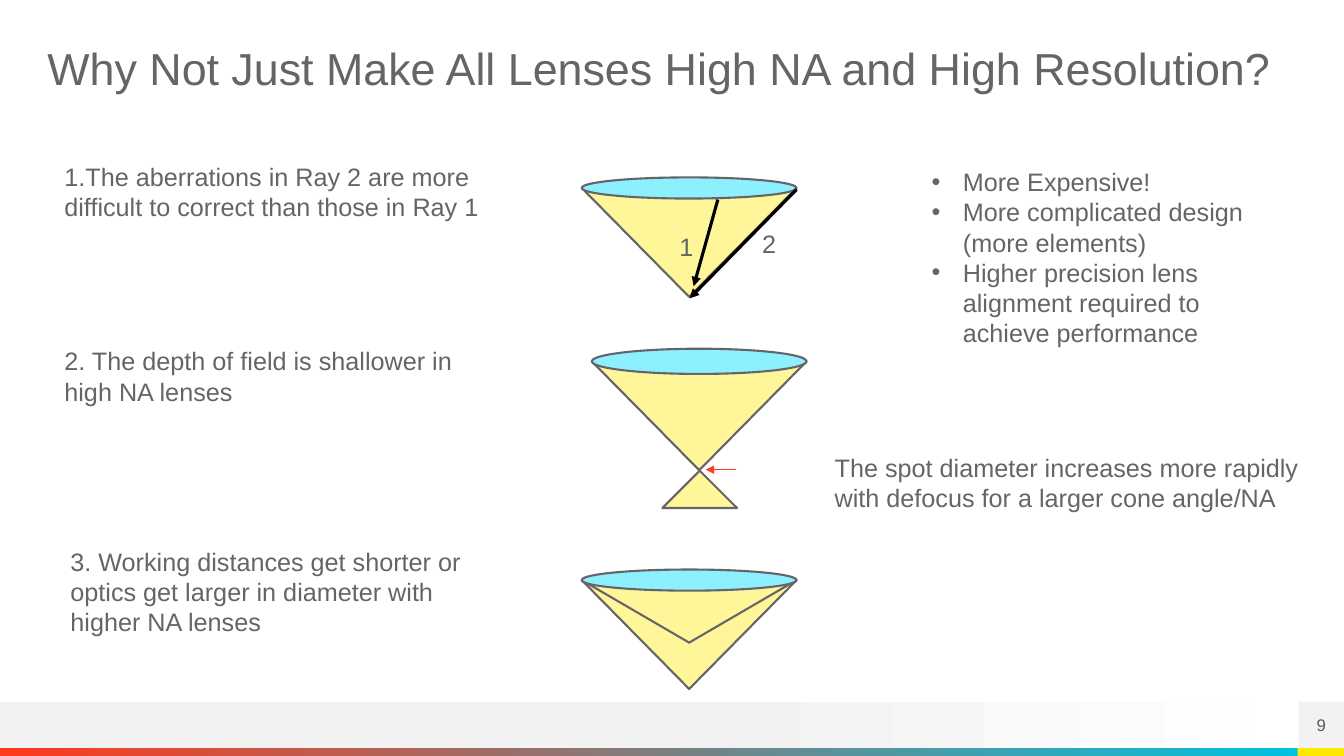
from dataclasses import dataclass

from lxml import etree
from pptx import Presentation
from pptx.dml.color import RGBColor
from pptx.enum.shapes import MSO_CONNECTOR, MSO_SHAPE
from pptx.enum.text import MSO_ANCHOR, MSO_AUTO_SIZE, PP_ALIGN
from pptx.oxml.ns import qn
from pptx.util import Inches, Pt

RECT = MSO_SHAPE.RECTANGLE
OVAL = MSO_SHAPE.OVAL
TRIANGLE = MSO_SHAPE.ISOSCELES_TRIANGLE
STRAIGHT = MSO_CONNECTOR.STRAIGHT
TOP, MIDDLE = MSO_ANCHOR.TOP, MSO_ANCHOR.MIDDLE
LEFT, CENTER = PP_ALIGN.LEFT, PP_ALIGN.CENTER
NO_FIT = MSO_AUTO_SIZE.NONE

COLORS = {
    "text": "656569", "page": "595959", "bar": "F2F2F2", "white": "FFFFFF",
    "red": "FF3A1D", "teal": "00C1DE", "yellow": "FFE800",
    "cone": "FFF699", "lens": "8CF0FF", "ray": "000000",
}
CONE_W = 2.13
NO_INSETS = {f"margin_{side}": 0 for side in ("left", "top", "right", "bottom")}


@dataclass
class Box:
    left: float
    top: float
    width: float
    height: float

    def emu(self) -> list:
        return [Inches(v) for v in (self.left, self.top, self.width, self.height)]


@dataclass
class Note:
    box: Box
    lines: list


@dataclass
class Cone:
    left: float
    lens_top: float
    lens_height: float
    apex_heights: list


@dataclass
class Ray:
    start: tuple
    end: tuple
    color: str
    width: float


NOTES = [
    Note(Box(0.54, 1.55, 4.38, 1.01), ["1.The aberrations in Ray 2 are more",
                                       "difficult to correct than those in Ray 1"]),
    Note(Box(6.64, 2.25, 0.38, 0.4), ["1"]),
    Note(Box(7.46, 2.22, 0.38, 0.4), ["2"]),
    Note(Box(0.54, 3.38, 4.38, 0.71), ["2. The depth of field is shallower in high NA lenses"]),
    Note(Box(8.18, 4.44, 5.02, 0.71), ["The spot diameter increases more rapidly "
                                       "with defocus for a larger cone angle/NA"]),
    Note(Box(0.6, 5.37, 4.38, 1.01), ["3. Working distances get shorter or optics get larger "
                                      "in diameter with higher NA lenses"]),
]
DRAWBACKS = Note(Box(9.14, 1.6, 3.65, 1.92), [
    "More Expensive!",
    "More complicated design (more elements)",
    "Higher precision lens alignment required to achieve performance",
])
CONES = [
    Cone(5.77, 1.76, 0.21, [1.08]),
    Cone(5.87, 3.46, 0.25, [1.08]),
    Cone(5.77, 5.65, 0.21, [1.08, 0.62]),
]
RAYS = [
    Ray((7.12, 1.98), (6.88, 2.84), "ray", 2.25),
    Ray((7.9, 1.88), (6.84, 2.96), "ray", 2.25),
    Ray((7.3, 4.66), (7, 4.66), "red", 1),
]


def rgb(name: str) -> RGBColor:
    return RGBColor.from_string(COLORS[name])


def set_all(obj, values: dict) -> None:
    for key, value in values.items():
        setattr(obj, key, value)


def write(tf, lines: list, size: float = 18, color: str = "text", align=LEFT) -> None:
    for i, line in enumerate(lines):
        p = tf.paragraphs[0] if i == 0 else tf.add_paragraph()
        set_all(p, {"alignment": align, "space_before": Pt(0)})
        r = p.add_run()
        r.text = line
        set_all(r.font, {"size": Pt(size), "name": "Arial"})
        r.font.color.rgb = rgb(color)


def place(sp, box: Box) -> None:
    set_all(sp, dict(zip(("left", "top", "width", "height"), box.emu())))


def add_shape(s, kind, box: Box, fill: str, outline: bool = False):
    sp = s.shapes.add_shape(kind, *box.emu())
    sp.shadow.inherit = False
    sp.fill.solid()
    sp.fill.fore_color.rgb = rgb(fill)
    if outline:
        sp.line.color.rgb = rgb("text")
        sp.line.width = Pt(1.5)
    else:
        sp.line.fill.background()
    return sp


def add_gradient(s, box: Box, stops: list) -> None:
    sp = add_shape(s, RECT, box, "bar")
    sp.fill.gradient()
    sp.fill.gradient_angle = 0
    for stop, (position, color) in zip(sp.fill.gradient_stops, stops):
        stop.position = position
        stop.color.rgb = rgb(color)


def add_cone(s, cone: Cone) -> None:
    rim = cone.lens_top + cone.lens_height / 2
    for height in cone.apex_heights:
        sp = add_shape(s, TRIANGLE, Box(cone.left, rim, CONE_W, height), "cone", True)
        sp.rotation = 180
    add_shape(s, OVAL, Box(cone.left, cone.lens_top, CONE_W, cone.lens_height), "lens", True)


def add_ray(s, ray: Ray) -> None:
    c = s.shapes.add_connector(STRAIGHT, *[Inches(v) for v in ray.start + ray.end])
    c.line.color.rgb = rgb(ray.color)
    c.line.width = Pt(ray.width)
    etree.SubElement(c.line._get_or_add_ln(), qn("a:tailEnd"), type="triangle")
    etree.SubElement(c._element.spPr, qn("a:effectLst"))


def add_note(s, note: Note) -> None:
    tf = s.shapes.add_textbox(*note.box.emu()).text_frame
    tf.word_wrap = True
    write(tf, note.lines)


def fill_title(s) -> None:
    sp = s.shapes.title
    place(sp, Box(0.47, 0.47, 12.4, 0.47))
    tf = sp.text_frame
    set_all(tf, {"auto_size": NO_FIT, "vertical_anchor": MIDDLE, "word_wrap": True, **NO_INSETS})
    write(tf, ["Why Not Just Make All Lenses High NA and High Resolution?"], 32)
    tf.paragraphs[0].line_spacing = 0.9


def fill_drawbacks(s) -> None:
    sp = s.placeholders[1]
    place(sp, DRAWBACKS.box)
    tf = sp.text_frame
    set_all(tf, {"auto_size": NO_FIT, "vertical_anchor": TOP, "word_wrap": True})
    write(tf, DRAWBACKS.lines)
    for p in tf.paragraphs:
        pPr = p._p.get_or_add_pPr()
        pPr.set("marL", str(Inches(0.31)))
        pPr.set("indent", str(Inches(-0.31)))
        etree.SubElement(pPr, qn("a:buChar"), char="•")


def add_footer(s) -> None:
    add_gradient(s, Box(0, 6.96, 13.33, 0.46), [(0.53, "bar"), (1, "white")])
    add_gradient(s, Box(0, 7.42, 12.87, 0.08), [(0, "red"), (1, "teal")])
    add_shape(s, RECT, Box(12.87, 7.42, 0.46, 0.08), "yellow")
    tf = add_shape(s, RECT, Box(12.88, 6.96, 0.45, 0.46), "bar").text_frame
    set_all(tf, {"vertical_anchor": MIDDLE, **NO_INSETS})
    write(tf, ["9"], 12, "page", CENTER)


def main() -> None:
    prs = Presentation()
    set_all(prs, {"slide_width": Inches(13.33), "slide_height": Inches(7.5)})
    s = prs.slides.add_slide(prs.slide_layouts[1])
    fill_title(s)
    fill_drawbacks(s)
    add_footer(s)
    for cone in CONES:
        add_cone(s, cone)
    add_shape(s, TRIANGLE, Box(6.57, 4.67, 0.74, 0.37), "cone", True)
    for ray in RAYS:
        add_ray(s, ray)
    for note in NOTES:
        add_note(s, note)
    prs.save("out.pptx")


if __name__ == "__main__":
    main()
